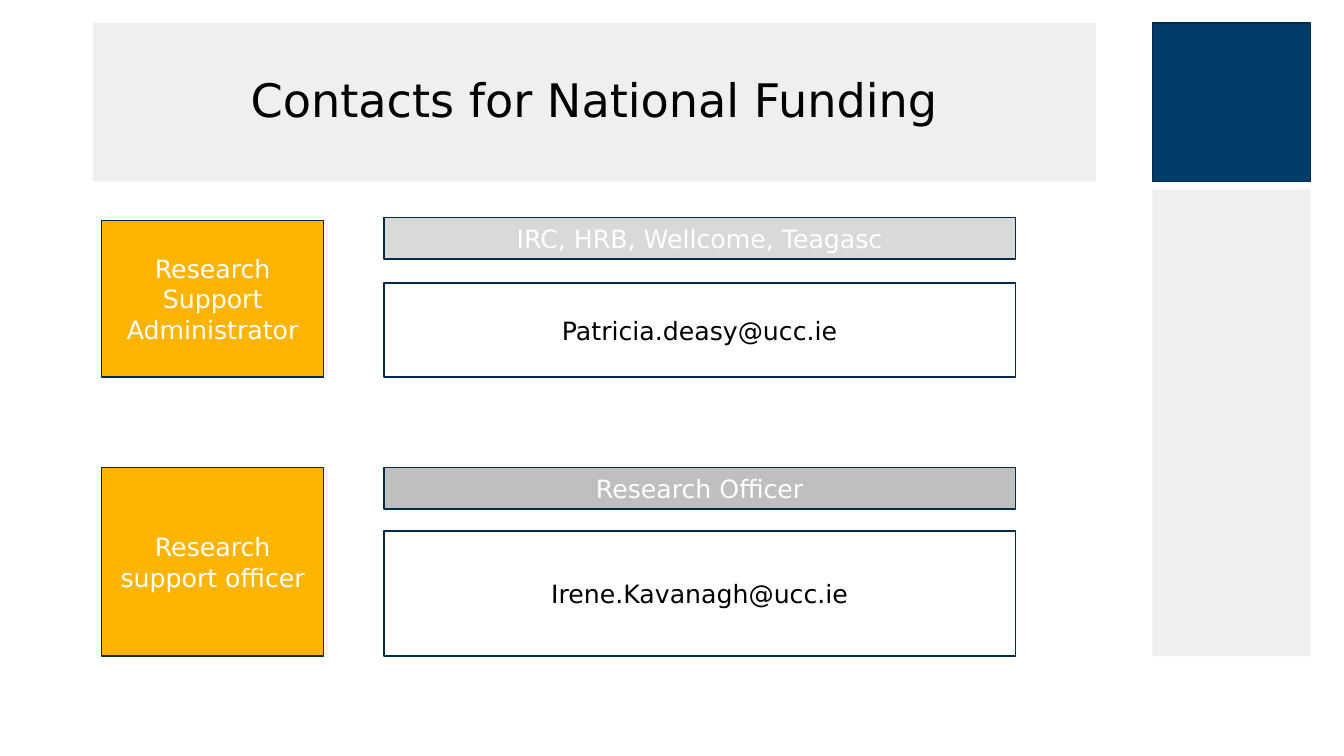
from dataclasses import dataclass

from pptx import Presentation
from pptx.dml.color import RGBColor
from pptx.enum.shapes import MSO_SHAPE as Shape
from pptx.enum.text import MSO_ANCHOR as Anchor, PP_ALIGN as Align
from pptx.util import Inches, Pt


@dataclass(frozen=True)
class Theme:
    font: str = "DejaVu Sans"
    title_size: int = 33
    body_size: int = 18
    panel: str = "EFEFF0"
    navy: str = "003C69"
    outline: str = "002C4E"
    amber: str = "FFB500"
    light_grey: str = "D9D9D9"
    mid_grey: str = "BFBFBF"
    white: str = "FFFFFF"
    black: str = "000000"


@dataclass(frozen=True)
class Box:
    left: float
    top: float
    width: float
    height: float


THEME = Theme()


def add_block(page, box, fill, outlined=True):
    block = page.shapes.add_shape(
        Shape.RECTANGLE, *(Inches(n) for n in (box.left, box.top, box.width, box.height))
    )
    block.shadow.inherit = False
    block.fill.solid()
    block.fill.fore_color.rgb = RGBColor.from_string(fill)
    if outlined:
        block.line.color.rgb = RGBColor.from_string(THEME.outline)
        block.line.width = Pt(1)
    else:
        block.line.fill.background()
    return block


def write(block, text, color, size=THEME.body_size):
    frame = block.text_frame
    frame.word_wrap = True
    frame.vertical_anchor = Anchor.MIDDLE
    frame.text = text
    para = frame.paragraphs[0]
    para.alignment = Align.CENTER
    for span in para.runs:
        span.font.name = THEME.font
        span.font.size = Pt(size)
        span.font.color.rgb = RGBColor.from_string(color)
    return para


def add_title(page, box, text):
    banner = add_block(page, box, THEME.panel, outlined=False)
    write(banner, text, THEME.black, THEME.title_size).line_spacing = 0.9


def add_sidebar(page, box):
    gap = 0.08
    panel_top = box.top + box.width + gap
    panel_height = box.height - box.width - gap
    panel = Box(box.left, panel_top, box.width, panel_height)
    add_block(page, panel, THEME.panel, outlined=False)
    add_block(page, Box(box.left, box.top, box.width, box.width), THEME.navy)


def add_contact(page, box, role, heading, email, heading_fill, gap, role_inset=0):
    role_width, detail_offset, heading_height = 2.2, 2.8, 0.41
    detail_left = box.left + detail_offset
    detail_width = box.width - detail_offset
    email_offset = heading_height + gap

    role_box = Box(box.left, box.top + role_inset, role_width, box.height - role_inset)
    heading_box = Box(detail_left, box.top, detail_width, heading_height)
    email_box = Box(detail_left, box.top + email_offset, detail_width, box.height - email_offset)

    write(add_block(page, role_box, THEME.amber), role, THEME.white)
    write(add_block(page, heading_box, heading_fill), heading, THEME.white)
    write(add_block(page, email_box, THEME.white), email, THEME.black)


def main():
    deck = Presentation()
    deck.slide_width = Inches(13.33)
    deck.slide_height = Inches(7.5)
    page = deck.slides.add_slide(deck.slide_layouts[6])

    add_sidebar(page, Box(11.43, 0.23, 1.57, 6.28))
    add_title(page, Box(0.92, 0.23, 9.95, 1.57), "Contacts for National Funding")
    add_contact(
        page, Box(1.01, 2.16, 9.06, 1.58),
        "Research Support Administrator", "IRC, HRB, Wellcome, Teagasc",
        "Patricia.deasy@ucc.ie", THEME.light_grey, gap=0.24, role_inset=0.03,
    )
    add_contact(
        page, Box(1.01, 4.64, 9.06, 1.87),
        "Research support officer", "Research Officer",
        "Irene.Kavanagh@ucc.ie", THEME.mid_grey, gap=0.22,
    )
    deck.save("out.pptx")


if __name__ == "__main__":
    main()
